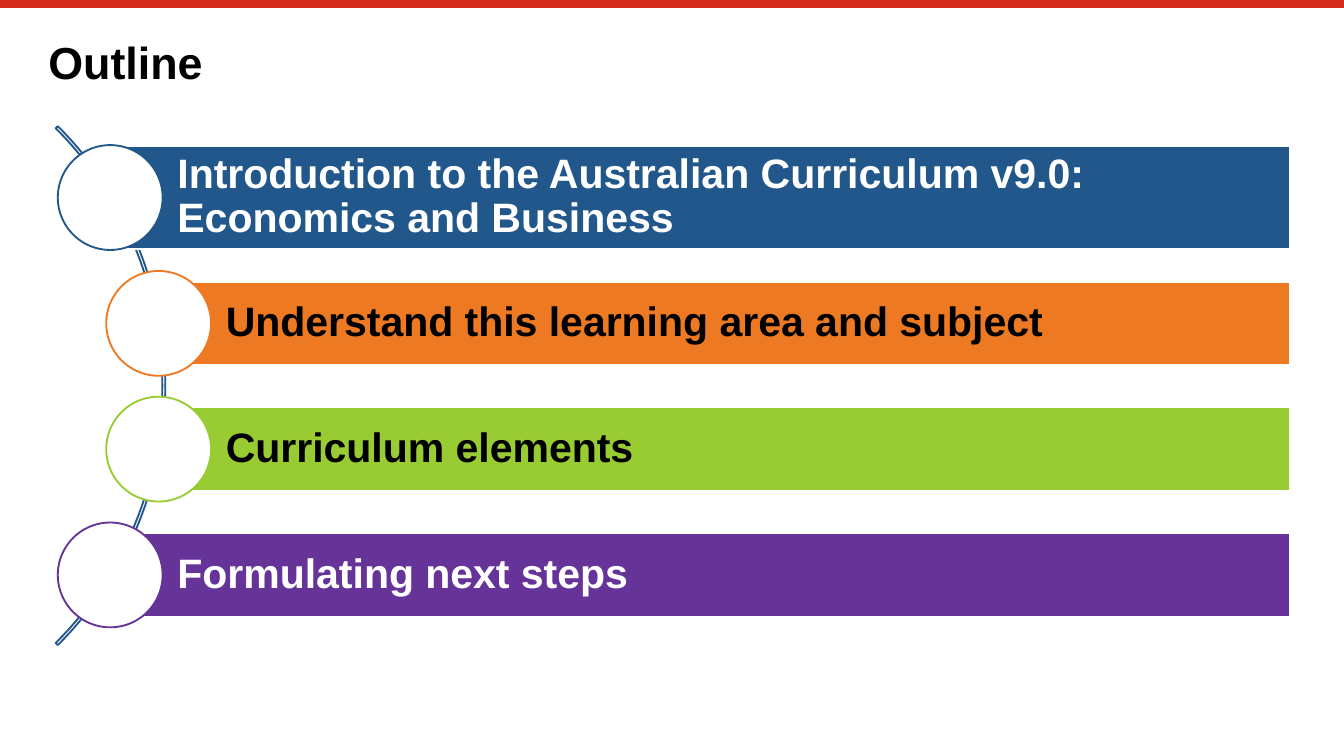
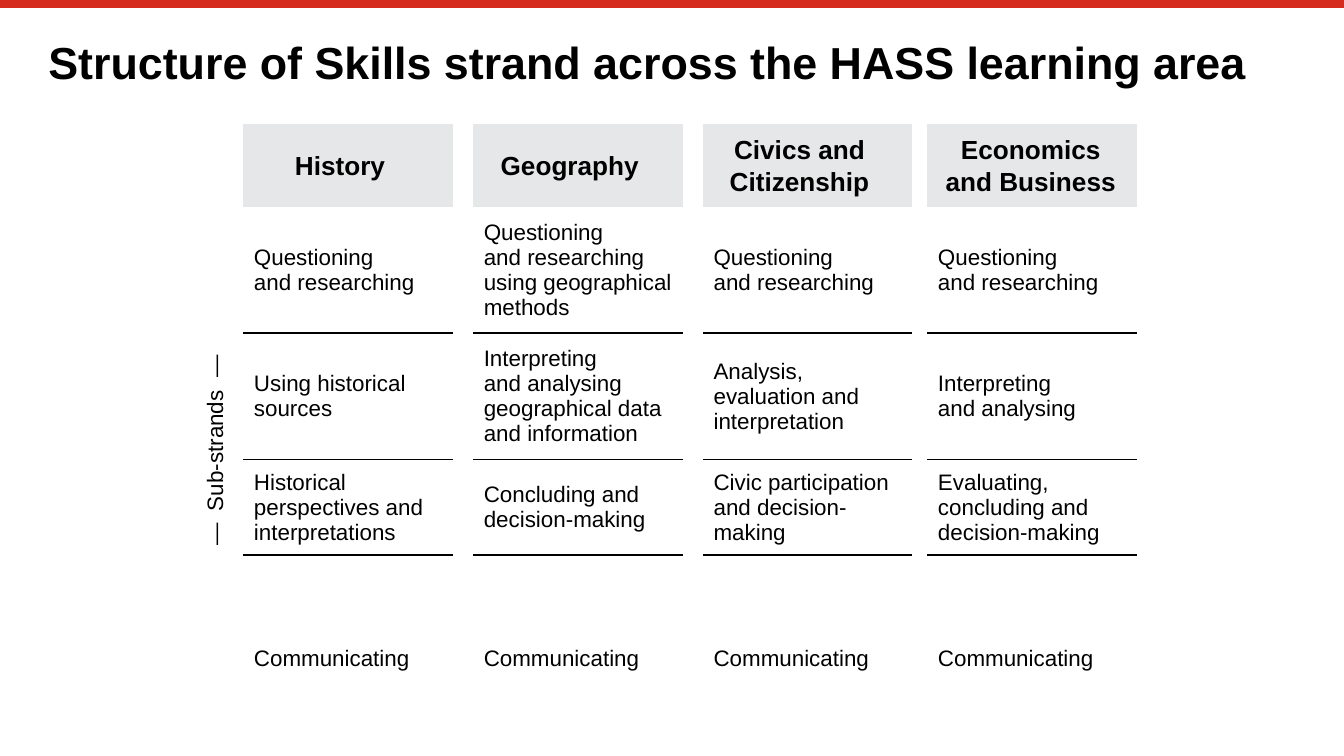
from pptx import Presentation
from pptx.dml.color import RGBColor
from pptx.enum.shapes import MSO_CONNECTOR, MSO_SHAPE
from pptx.enum.text import MSO_ANCHOR, PP_ALIGN
from pptx.oxml import parse_xml
from pptx.oxml.ns import nsdecls, qn
from pptx.util import Inches, Pt

RED = RGBColor(0xD5, 0x2B, 0x1E)
BLUE = RGBColor(0x21, 0x57, 0x8A)
ORANGE = RGBColor(0xED, 0x7A, 0x23)
GREEN = RGBColor(0x99, 0xCC, 0x33)
PURPLE = RGBColor(0x66, 0x33, 0x99)
GREY = RGBColor(0xE6, 0xE7, 0xE8)
BLACK = RGBColor(0, 0, 0)
WHITE = RGBColor(0xFF, 0xFF, 0xFF)
RECTANGLE, OVAL, BLOCK_ARC = MSO_SHAPE.RECTANGLE, MSO_SHAPE.OVAL, MSO_SHAPE.BLOCK_ARC
TOP, MIDDLE = MSO_ANCHOR.TOP, MSO_ANCHOR.MIDDLE
LEFT, CENTER = PP_ALIGN.LEFT, PP_ALIGN.CENTER
NO_TABLE_STYLE = "{2D5ABB26-0587-4C30-8999-92F81FD0307C}"

TITLE_FONT = {"name": "Arial", "size": Pt(24), "bold": True}
BAR_FONT = {"name": "Arial", "size": Pt(22), "bold": True}
HEADER_FONT = {"name": "Arial", "size": Pt(14), "bold": True}
BODY_FONT = {"name": "Arial", "size": Pt(12), "bold": False}


def write(frame, text, font, color, alignment=LEFT, spacing=1.0, indents=(0, 0)):
    """Fill a frame with one paragraph; indents are left and right, in inches."""
    frame.text = text
    paragraph = frame.paragraphs[0]
    paragraph.alignment = alignment
    paragraph.line_spacing = spacing
    for name, indent in zip(("marL", "marR"), indents):
        paragraph._p.get_or_add_pPr().set(name, str(Inches(indent)))
    for name, value in font.items():
        setattr(paragraph.font, name, value)
    paragraph.font.color.rgb = color
    return paragraph


def add_outlined(slide, preset, box, line_color, fill_color=None):
    """Add a preset shape with a 1 pt outline and an optional solid fill."""
    shape = slide.shapes.add_shape(preset, *map(Inches, box))
    shape.shadow.inherit = False
    if fill_color is None:
        shape.fill.background()
    else:
        shape.fill.solid()
        shape.fill.fore_color.rgb = fill_color
    shape.line.color.rgb = line_color
    shape.line.width = Pt(1)
    return shape


presentation = Presentation()
presentation.slide_width = Inches(10)
presentation.slide_height = Inches(10) * 9 // 16

# Both slides: red band and title
slides = []
for title in ("Outline", "Structure of Skills strand across the HASS learning area"):
    slide = presentation.slides.add_slide(presentation.slide_layouts[6])
    band = slide.shapes.add_connector(
        MSO_CONNECTOR.STRAIGHT, 0, Inches(0.03), Inches(10), Inches(0.03))
    band.line.color.rgb = RED
    band.line.width = Pt(4.2)
    band._element.spPr.append(parse_xml(f"<a:effectLst {nsdecls('a')}/>"))

    title_box = slide.shapes.add_textbox(
        Inches(0.36), Inches(0.3), Inches(9.29), Inches(0.39))
    frame = title_box.text_frame
    frame.word_wrap = True
    frame.vertical_anchor = TOP
    frame.margin_left = frame.margin_right = frame.margin_top = frame.margin_bottom = 0
    write(frame, title, TITLE_FONT, BLACK, spacing=0.9)
    slides.append(slide)
outline, structure = slides

# Outline: bars with circles along an arc
arc = add_outlined(outline, BLOCK_ARC, (-4.23, 0.14, 5.46, 5.46), BLUE)
for index, value in enumerate((189, 27, 0.004)):
    arc.adjustments[index] = value

FIRST_CENTER, BAR_PITCH, BAR_RIGHT, CIRCLE = 1.47, 0.936, 9.6, 0.78
topics = [
    ("Introduction to the Australian Curriculum v9.0: Economics and Business",
     BLUE, WHITE, 0.82, 0.77),
    ("Understand this learning area and subject", ORANGE, BLACK, 1.18, 0.62),
    ("Curriculum elements", GREEN, BLACK, 1.18, 0.62),
    ("Formulating next steps", PURPLE, WHITE, 0.82, 0.62),
]
for index, (topic, color, text_color, left, height) in enumerate(topics):
    center = FIRST_CENTER + index * BAR_PITCH
    bar = add_outlined(outline, RECTANGLE,
                       (left, center - height / 2, BAR_RIGHT - left, height), WHITE, color)
    frame = bar.text_frame
    frame.word_wrap = True
    frame.vertical_anchor = MIDDLE
    frame.margin_left = Inches(0.5)
    frame.margin_right = frame.margin_top = frame.margin_bottom = Inches(0.06)
    write(frame, topic, BAR_FONT, text_color, spacing=0.9)
    add_outlined(outline, OVAL,
                 (left - CIRCLE / 2, center - CIRCLE / 2, CIRCLE, CIRCLE), color, WHITE)

# Structure: one table column per subject, with narrow gaps between
subjects = {
    "History": [
        "Questioning \vand researching",
        "Using historical sources",
        "Historical perspectives and interpretations",
        "Communicating"],
    "Geography": [
        "Questioning \vand researching using geographical methods",
        "Interpreting \vand analysing geographical data \vand information",
        "Concluding and decision-making",
        "Communicating"],
    "Civics and Citizenship": [
        "Questioning \vand researching",
        "Analysis, evaluation and interpretation",
        "Civic participation and decision-making",
        "Communicating"],
    "Economics and Business": [
        "Questioning \vand researching",
        "Interpreting \vand analysing",
        "Evaluating, concluding and decision-making",
        "Communicating"],
}
column_widths = [0.32, 1.56, 0.15, 1.56, 0.15, 1.56, 0.11, 1.56]
row_heights = [0.62, 0.94, 0.94, 0.71, 0.71]
table = structure.shapes.add_table(
    len(row_heights), len(column_widths), Inches(1.49), Inches(0.92),
    Inches(sum(column_widths)), Inches(sum(row_heights))).table
table.first_row = table.horz_banding = False
table._tbl.tblPr.find(qn("a:tableStyleId")).text = NO_TABLE_STYLE
for column, width in zip(table.columns, column_widths):
    column.width = Inches(width)
for row, height in zip(table.rows, row_heights):
    row.height = Inches(height)
for cell in table.iter_cells():
    cell.fill.background()
    cell.margin_left = cell.margin_right = cell.margin_top = cell.margin_bottom = 0

HEADER_INDENT = 0.12
side_label = table.cell(0, 0)
side_label.merge(table.cell(len(row_heights) - 1, 0))
side_label._tc.get_or_add_tcPr().set("vert", "vert270")
paragraph = write(side_label.text_frame, "—  Sub-strands  —", BODY_FONT, BLACK,
                  CENTER, 1.1, (0, HEADER_INDENT))
paragraph.space_after = Pt(6)

for index, (subject, sub_strands) in enumerate(subjects.items()):
    column = 2 * index + 1
    header = table.cell(0, column)
    header.fill.solid()
    header.fill.fore_color.rgb = GREY
    header.vertical_anchor = MIDDLE
    if index < 2:
        header.margin_left = header.margin_right = Inches(0.05)
    left_indent = 0.1 if subject == "Economics and Business" else 0
    paragraph = write(header.text_frame, subject, HEADER_FONT, BLACK,
                      CENTER, 1.1, (left_indent, HEADER_INDENT))
    paragraph.space_after = Pt(6)

    for row, sub_strand in enumerate(sub_strands, start=1):
        cell = table.cell(row, column)
        cell.vertical_anchor = MIDDLE
        write(cell.text_frame, sub_strand, BODY_FONT, BLACK, indents=(0.08, 0.05))
        edges = ("lnB",) if row == 1 else ("lnT", "lnB")
        for position, edge in enumerate(edges):
            cell._tc.get_or_add_tcPr().insert(position, parse_xml(
                f'<a:{edge} {nsdecls("a")} w="{Pt(1)}"><a:solidFill>'
                f'<a:srgbClr val="{BLACK}"/></a:solidFill></a:{edge}>'))

presentation.save("out.pptx")
